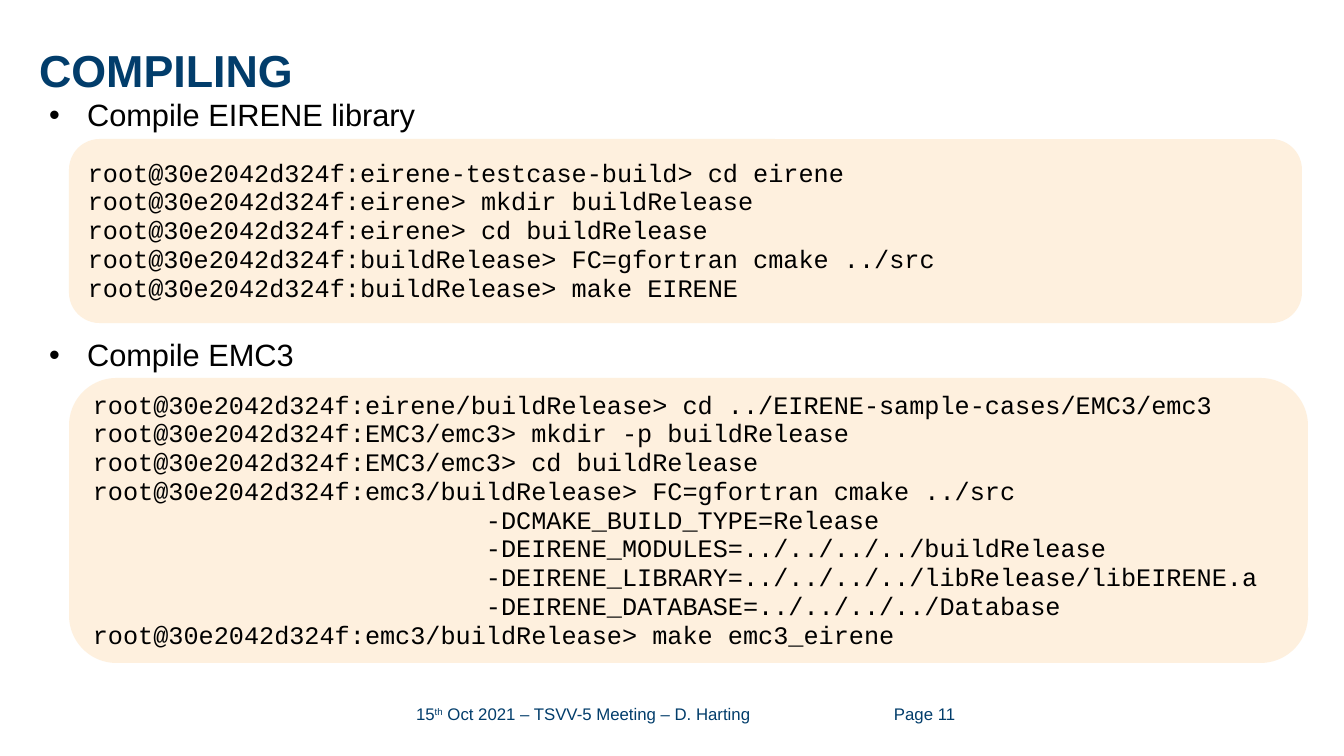
"""Builds the slide on compiling EIRENE and EMC3."""
from lxml import etree
from pptx import Presentation, util as u
from pptx.dml.color import RGBColor
from pptx.enum import shapes, text
from pptx.oxml.ns import qn

PX = 914400 / 100.8
COLOURS = {"navy": "023D6B", "cream": "FEF0DE", "black": "000000"}
FORMATS = {
    "title": ({"name": "Arial", "size": u.Pt(32), "bold": True}, "navy"),
    "footer": ({"name": "Arial", "size": u.Pt(12)}, "navy"),
    "bullet": ({"name": "Arial", "size": u.Pt(22)}, "black"),
    "code": ({"name": "Courier New", "size": u.Pt(18)}, "black"),
}
FLAG_INDENT = " " * 26
EIRENE_CODE = [
    "root@30e2042d324f:eirene-testcase-build> cd eirene",
    "root@30e2042d324f:eirene> mkdir buildRelease",
    "root@30e2042d324f:eirene> cd buildRelease",
    "root@30e2042d324f:buildRelease> FC=gfortran cmake ../src",
    "root@30e2042d324f:buildRelease> make EIRENE",
]
EMC3_CODE = [
    "root@30e2042d324f:eirene/buildRelease> cd ../EIRENE-sample-cases/EMC3/emc3",
    "root@30e2042d324f:EMC3/emc3> mkdir -p buildRelease",
    "root@30e2042d324f:EMC3/emc3> cd buildRelease",
    "root@30e2042d324f:emc3/buildRelease> FC=gfortran cmake ../src",
    FLAG_INDENT + "-DCMAKE_BUILD_TYPE=Release",
    FLAG_INDENT + "-DEIRENE_MODULES=../../../../buildRelease",
    FLAG_INDENT + "-DEIRENE_LIBRARY=../../../../libRelease/libEIRENE.a",
    FLAG_INDENT + "-DEIRENE_DATABASE=../../../../Database",
    "root@30e2042d324f:emc3/buildRelease> make emc3_eirene",
]


def px(length):
    return u.Emu(round(length * PX))


def colour(name):
    return RGBColor.from_string(COLOURS[name])


def assign(target, values):
    for key, value in values.items():
        setattr(target, key, value)


class SlideBuilder:
    def __init__(self, slide):
        self.slide = slide

    def place(self, item, box):
        assign(item, dict(zip(("left", "top", "width", "height"), map(px, box))))

    def frame(self, item, inset=None, **values):
        frame = item.text_frame
        assign(frame, {"word_wrap": True, **values})
        if inset is not None:
            sides = ("left", "top", "right", "bottom")
            assign(frame, {f"margin_{side}": px(inset) for side in sides})
        return frame

    def add_words(self, paragraph, words, style, spacing=None):
        values, ink = FORMATS[style]
        assign(paragraph, {"alignment": text.PP_ALIGN.LEFT, "line_spacing": spacing})
        run = paragraph.add_run()
        run.text = words
        assign(run.font, values)
        run.font.color.rgb = colour(ink)
        return run

    def title(self, words, box):
        heading = self.slide.shapes.title
        self.place(heading, box)
        frame = self.frame(heading, 0, vertical_anchor=text.MSO_ANCHOR.TOP,
                           auto_size=text.MSO_AUTO_SIZE.NONE)
        self.add_words(frame.paragraphs[0], words, "title", 1.14)

    def bullet(self, index, words, box):
        step = self.slide.placeholders[index]
        self.place(step, box)
        frame = self.frame(step, vertical_anchor=text.MSO_ANCHOR.TOP,
                           auto_size=text.MSO_AUTO_SIZE.SHAPE_TO_FIT_TEXT)
        paragraph = frame.paragraphs[0]
        properties = paragraph._p.get_or_add_pPr()
        properties.set("marL", str(px(38)))
        properties.set("indent", str(-px(38)))
        etree.SubElement(properties, qn("a:buFont")).set("typeface", "Arial")
        etree.SubElement(properties, qn("a:buChar")).set("char", "•")
        paragraph.space_before = u.Pt(0)
        self.add_words(paragraph, words, "bullet", 0.95)

    def code(self, lines, box):
        panel = self.slide.shapes.add_shape(
            shapes.MSO_SHAPE.ROUNDED_RECTANGLE, *map(px, box))
        panel.shadow.inherit = False
        panel.fill.solid()
        panel.fill.fore_color.rgb = colour("cream")
        panel.line.fill.background()
        frame = self.frame(panel, vertical_anchor=text.MSO_ANCHOR.MIDDLE)
        for number, line in enumerate(lines):
            paragraph = frame.add_paragraph() if number else frame.paragraphs[0]
            self.add_words(paragraph, line, "code", 0.95)

    def footer(self, parts, box):
        note = self.slide.shapes.add_textbox(*map(px, box))
        frame = self.frame(note, 0)
        for words, baseline in parts:
            run = self.add_words(frame.paragraphs[0], words, "footer")
            if baseline:
                run._r.get_or_add_rPr().set("baseline", str(baseline))


def main():
    deck = Presentation()
    assign(deck, {"slide_width": px(1344), "slide_height": px(756)})
    builder = SlideBuilder(deck.slides.add_slide(deck.slide_layouts[3]))
    builder.title("COMPILING", (39, 35, 1262, 124))
    builder.bullet(1, "Compile EIRENE library", (39, 93, 1236, 45))
    builder.code(EIRENE_CODE, (69, 139, 1233, 184))
    builder.bullet(2, "Compile EMC3", (39, 333, 1236, 45))
    builder.code(EMC3_CODE, (69, 378, 1239, 285))
    builder.footer([("15", 0), ("th", 30000),
                    (" Oct 2021 – TSVV-5 Meeting – D. Harting", 0)],
                   (416, 704, 351, 24))
    builder.footer([("Page 11", 0)], (894, 704, 80, 24))
    deck.save("out.pptx")


if __name__ == "__main__":
    main()
